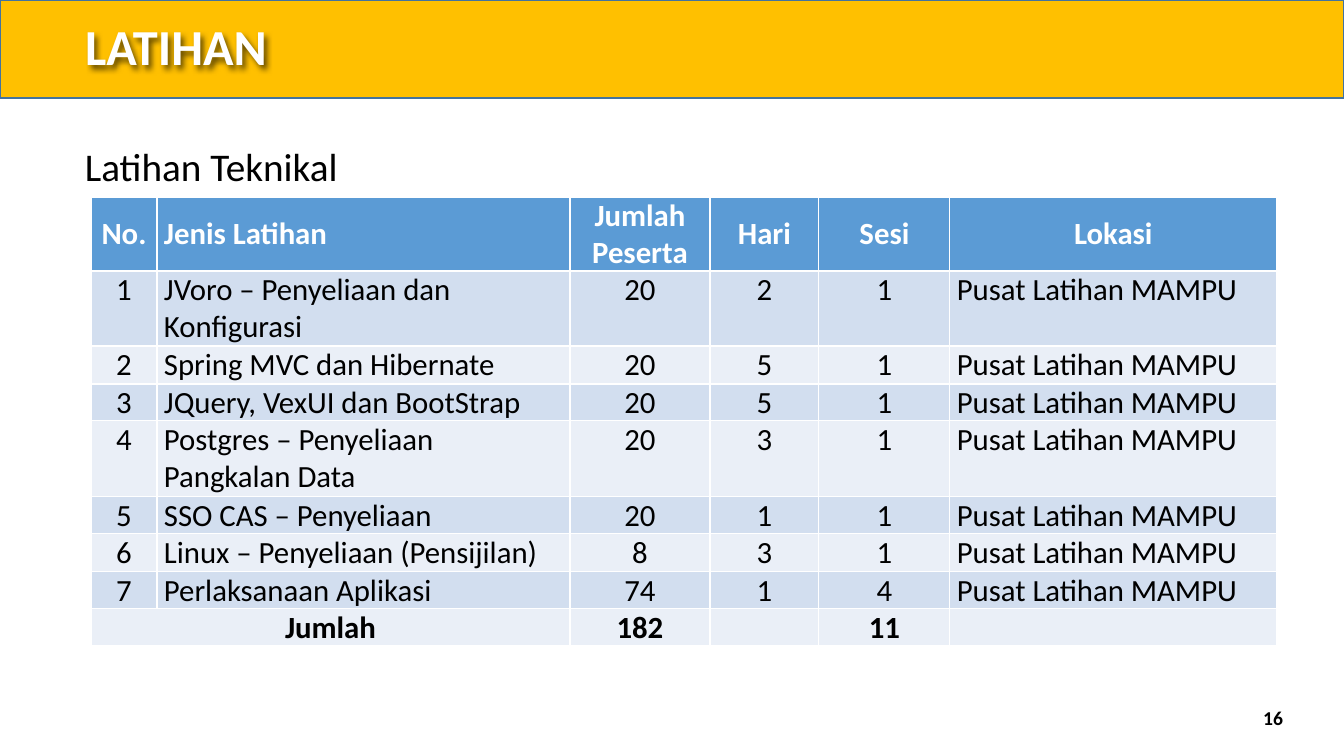
from lxml import etree
from pptx import Presentation
from pptx import util as u
from pptx.dml.color import RGBColor
from pptx.enum import shapes, text
from pptx.oxml.ns import qn

PX = 9071.43  # EMU per px, at 100.8 px to the inch
WHITE = RGBColor(0xFF, 0xFF, 0xFF)
BLACK = RGBColor(0x00, 0x00, 0x00)
AMBER = RGBColor(0xFF, 0xC0, 0x00)
BAND_EDGE = RGBColor(0x43, 0x73, 0x9E)
HEADER_BLUE = RGBColor(0x5B, 0x9B, 0xD5)
ROW_FILLS = [RGBColor(0xD2, 0xDE, 0xEF), RGBColor(0xEA, 0xEF, 0xF7)]
LEFT, CENTER, RIGHT = text.PP_ALIGN.LEFT, text.PP_ALIGN.CENTER, text.PP_ALIGN.RIGHT
TOP, MIDDLE = text.MSO_ANCHOR.TOP, text.MSO_ANCHOR.MIDDLE


def px(*lengths):
    return [round(length * PX) for length in lengths]


def write(frame, words, size, color=BLACK, bold=False, align=LEFT, anchor=TOP, spacing=1.0):
    frame.word_wrap = True
    frame.vertical_anchor = anchor
    paragraph = frame.paragraphs[0]
    paragraph.alignment = align
    paragraph.line_spacing = spacing
    run = paragraph.add_run()
    run.text = words
    run.font.name = "Calibri"
    run.font.size = u.Pt(size)
    run.font.bold = bold
    run.font.color.rgb = color


presentation = Presentation()
presentation.slide_width, presentation.slide_height = px(1344, 756)
slide = presentation.slides.add_slide(presentation.slide_layouts[5])

# Title band, placed behind the title
band = slide.shapes.add_shape(shapes.MSO_SHAPE.RECTANGLE, *px(0, 0, 1344, 98))
band.shadow.inherit = False
band.fill.solid()
band.fill.fore_color.rgb = AMBER
band.line.color.rgb = BAND_EDGE
band.line.width = u.Pt(1)
title = slide.shapes.title
title._element.addprevious(band._element)

title.left, title.top, title.width, title.height = px(75, 1, 927, 97)
write(title.text_frame, "LATIHAN", 36, WHITE, bold=True, anchor=MIDDLE, spacing=0.9)
effects = etree.SubElement(title._element.spPr, qn("a:effectLst"))
shadow = etree.SubElement(effects, qn("a:outerShdw"), blurRad="50800", dist="38100", dir="2700000")
shadow_color = etree.SubElement(shadow, qn("a:srgbClr"), val="000000")
etree.SubElement(shadow_color, qn("a:alpha"), val="60000")

subtitle = slide.shapes.add_textbox(*px(75, 143, 1218, 50))
write(subtitle.text_frame, "Latihan Teknikal", 28, spacing=0.9)

page_number = slide.shapes.add_textbox(*px(1002, 698, 291, 40))
write(page_number.text_frame, "16", 14, bold=True, align=RIGHT, anchor=MIDDLE)

# Training table
headings = ["No.", "Jenis Latihan", "Jumlah Peserta", "Hari", "Sesi", "Lokasi"]
trainings = [
    ("JVoro – Penyeliaan dan Konfigurasi", 20, 2, 1),
    ("Spring MVC dan Hibernate", 20, 5, 1),
    ("JQuery, VexUI dan BootStrap", 20, 5, 1),
    ("Postgres – Penyeliaan Pangkalan Data", 20, 3, 1),
    ("SSO CAS – Penyeliaan", 20, 1, 1),
    ("Linux – Penyeliaan (Pensijilan)", 8, 3, 1),
    ("Perlaksanaan Aplikasi", 74, 1, 4),
]
rows = [headings]
for number, training in enumerate(trainings, 1):
    rows.append([number, *training, "Pusat Latihan MAMPU"])
rows.append(["Jumlah", "", 182, "", 11, ""])
column_widths = [66, 413, 140, 109, 131, 327]
row_heights = [74, 75, 38, 37, 76, 37, 38, 37, 37]
total_row = len(rows) - 1

table = slide.shapes.add_table(
    len(rows), len(headings), *px(91, 197, sum(column_widths), sum(row_heights))
).table
for column, width in zip(table.columns, px(*column_widths)):
    column.width = width
for row, height in zip(table.rows, px(*row_heights)):
    row.height = height

for r, values in enumerate(rows):
    is_header = r == 0
    for c, value in enumerate(values):
        cell = table.cell(r, c)
        cell.margin_left, cell.margin_right = px(7, 7)
        cell.margin_top = cell.margin_bottom = 0
        cell.fill.solid()
        cell.fill.fore_color.rgb = HEADER_BLUE if is_header else ROW_FILLS[(r - 1) % 2]
        cell.vertical_anchor = MIDDLE if is_header else TOP
        if value == "":
            continue
        is_left = c == 1 or (c == 5 and not is_header)
        write(
            cell.text_frame, str(value), 22, WHITE if is_header else BLACK,
            bold=r in (0, total_row), align=LEFT if is_left else CENTER,
            anchor=MIDDLE if is_header else TOP,
        )
table.cell(total_row, 0).merge(table.cell(total_row, 1))

presentation.save("out.pptx")
